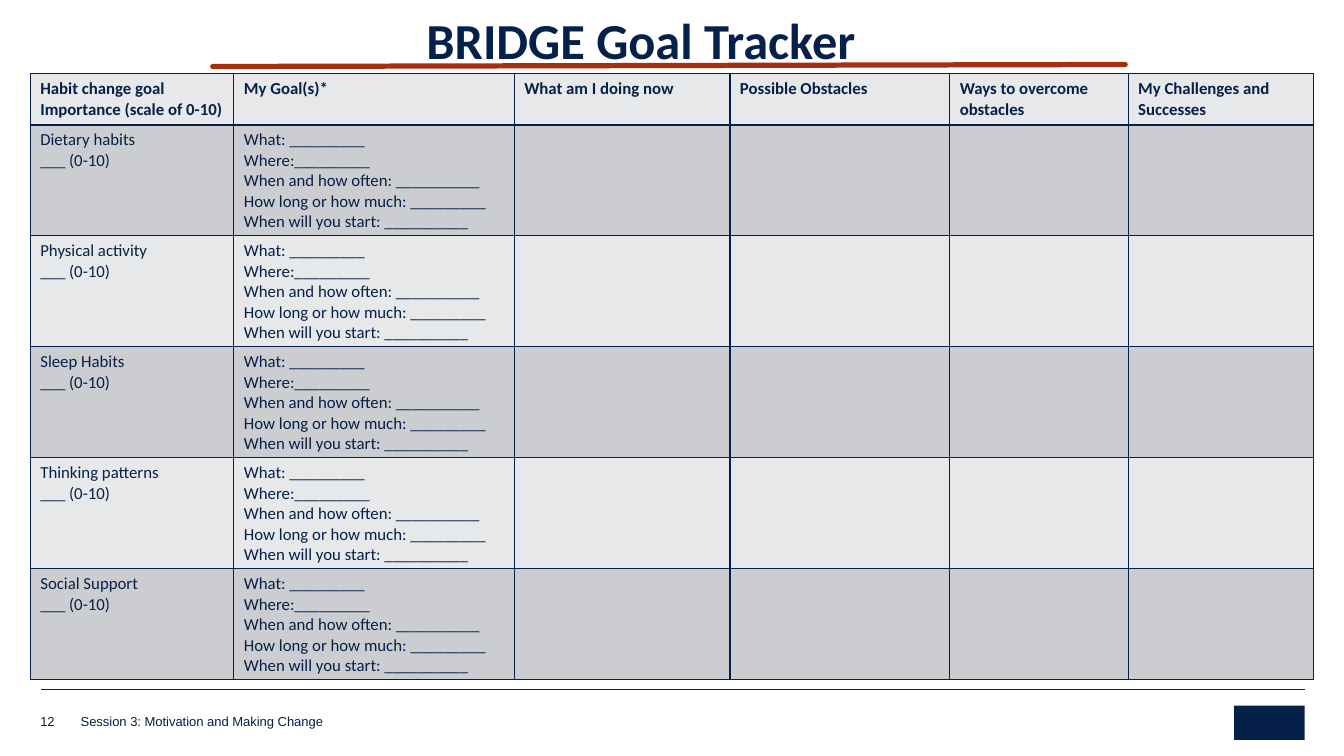
import pptx
import pptx.util
import pptx.dml.color
import pptx.enum.shapes
import pptx.enum.text
import pptx.oxml
import pptx.oxml.ns
import lxml.etree

Inches = pptx.util.Inches
Pt = pptx.util.Pt
HUES = {"navy": "052049", "rust": "A5300F", "light": "E7E8E9", "dark": "CCCDD0"}
NS = pptx.oxml.ns.nsdecls("a")


def hue(name):
    return pptx.dml.color.RGBColor.from_string(HUES[name])


def write(para, text, size, font, bold=False):
    for i, line in enumerate(text.split("\n")):
        if i:
            para.add_line_break()
        run = para.add_run()
        run.text = line
        run.font.size = Pt(size)
        run.font.name = font
        run.font.bold = bold
        run.font.color.rgb = hue("navy")


deck = pptx.Presentation()
deck.slide_width = Inches(13.33)
deck.slide_height = Inches(7.5)
slide = deck.slides.add_slide(deck.slide_layouts[5])
shapes = slide.shapes

rules = [
    (0.41, 6.84, 12.94, 6.84, "navy", 0.25, "flat"),
    (2.11, 0.66, 11.16, 0.64, "rust", 3.75, "rnd"),
]
for x1, y1, x2, y2, tint, width, cap in rules:
    rule = shapes.add_connector(
        pptx.enum.shapes.MSO_CONNECTOR.STRAIGHT,
        Inches(x1), Inches(y1), Inches(x2), Inches(y2))
    rule.line.color.rgb = hue(tint)
    rule.line.width = Pt(width)
    rule.line._get_or_add_ln().set("cap", cap)
    lxml.etree.SubElement(rule._element.spPr, pptx.oxml.ns.qn("a:effectLst"))

badge = shapes.add_shape(
    pptx.enum.shapes.MSO_SHAPE.RECTANGLE,
    Inches(12.24), Inches(7), Inches(0.7), Inches(0.34))
badge.shadow.inherit = False
badge.fill.solid()
badge.fill.fore_color.rgb = hue("navy")
badge.line.fill.background()

notes = [
    (0.8, 7.08, 6.29, 0.15, "Session 3: Motivation and Making Change"),
    (0.4, 7.06, 0.36, 0.17, "12"),
]
for left, top, width, height, text in notes:
    box = shapes.add_textbox(Inches(left), Inches(top), Inches(width), Inches(height))
    frame = box.text_frame
    frame.word_wrap = True
    frame.margin_left = frame.margin_right = frame.margin_top = frame.margin_bottom = 0
    frame.vertical_anchor = pptx.enum.text.MSO_ANCHOR.BOTTOM
    write(frame.paragraphs[0], text, 9.3, "Arial")

title = shapes.title
title.left, title.top = Inches(4.13), Inches(0.13)
title.width, title.height = Inches(5.91), Inches(1.53)
frame = title.text_frame
frame.auto_size = pptx.enum.text.MSO_AUTO_SIZE.NONE
frame.vertical_anchor = pptx.enum.text.MSO_ANCHOR.TOP
para = frame.paragraphs[0]
para.alignment = pptx.enum.text.PP_ALIGN.LEFT
para.line_spacing = 0.85
write(para, "BRIDGE Goal Tracker", 36, "Calibri", True)

heads = [
    "Habit change goal Importance (scale of 0-10)", "My Goal(s)*",
    "What am I doing now", "Possible Obstacles",
    "Ways to overcome obstacles", "My Challenges and Successes",
]
habits = ["Dietary habits", "Physical activity", "Sleep Habits",
          "Thinking patterns", "Social Support"]
goals = "\n".join([
    "What: _________",
    "Where:_________",
    "When and how often: __________",
    "How long or how much: _________",
    "When will you start: __________",
])
rows = [heads] + [[habit + "\n___ (0-10)", goals, "", "", "", ""] for habit in habits]
widths = [2.02, 2.78, 2.14, 2.18, 1.77, 1.84]

grid = shapes.add_table(
    len(rows), len(widths), Inches(0.3), Inches(0.73), Inches(12.73), Inches(6.01)).table
grid.first_row = False
grid.horz_banding = False
for col, width in zip(grid.columns, widths):
    col.width = Inches(width)

for r, row in enumerate(rows):
    grid.rows[r].height = Inches(1.1 if r else 0.51)
    for c, text in enumerate(row):
        cell = grid.cell(r, c)
        props = cell._tc.get_or_add_tcPr()
        for side in ("lnL", "lnR", "lnT", "lnB"):
            props.append(pptx.oxml.parse_xml(
                f'<a:{side} {NS} w="12700"><a:solidFill>'
                f'<a:srgbClr val="{HUES["navy"]}"/></a:solidFill></a:{side}>'))
        cell.fill.solid()
        cell.fill.fore_color.rgb = hue("dark" if r % 2 else "light")
        if text:
            write(cell.text_frame.paragraphs[0], text, 12, "Calibri", r == 0)

deck.save("out.pptx")
